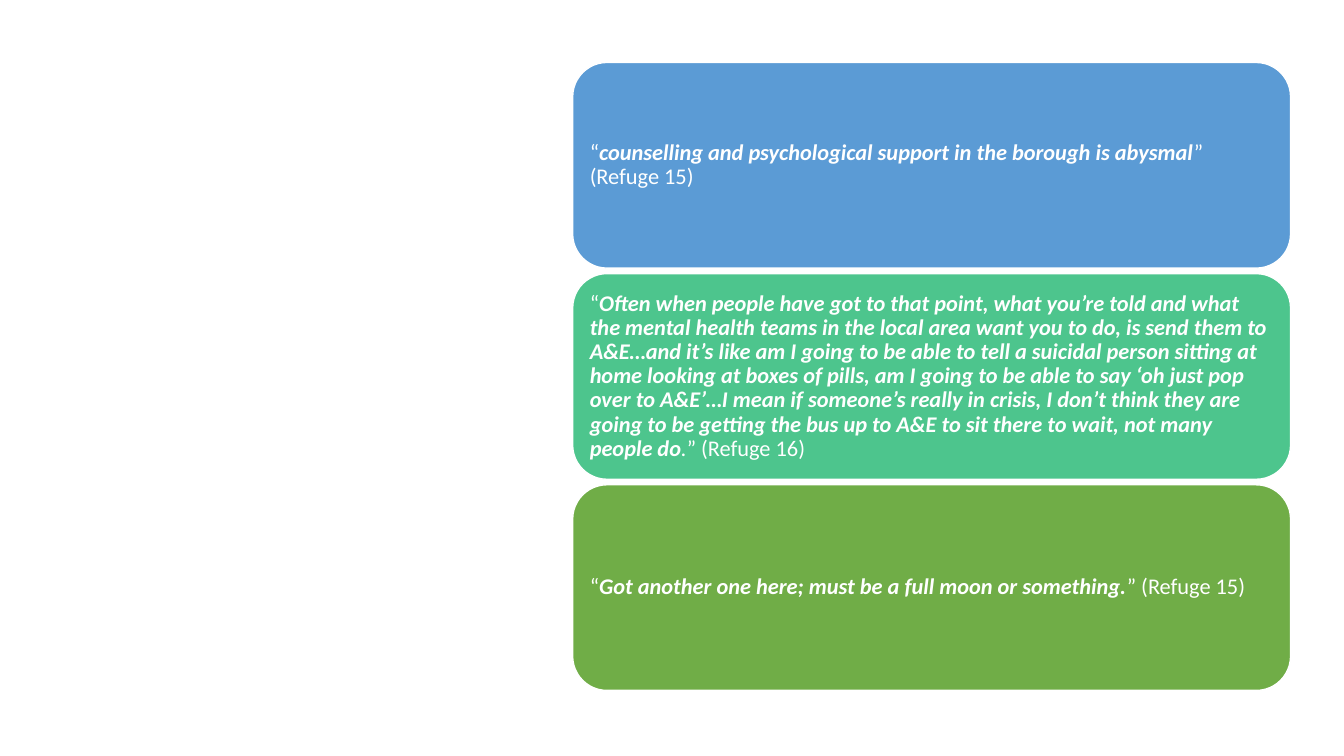
from dataclasses import dataclass

from pptx import Presentation
from pptx.dml.color import RGBColor
from pptx.enum.shapes import MSO_SHAPE
from pptx.enum.text import MSO_ANCHOR, PP_ALIGN
from pptx.util import Inches, Pt

ROUND = MSO_SHAPE.ROUNDED_RECTANGLE
MIDDLE = MSO_ANCHOR.MIDDLE
LEFT = PP_ALIGN.LEFT


@dataclass(frozen=True)
class Theme:
    blue: str = "5B9BD5"
    teal: str = "4DC58D"
    green: str = "70AD47"
    white: str = "FFFFFF"
    font: str = "Calibri"
    size: int = 16


THEME = Theme()
PLAIN, SLANT, STRONG = (False, False), (False, True), (True, True)

QUOTES = [
    (THEME.blue, [
        ("“", PLAIN),
        ("counselling and psychological support in the borough is abysmal", STRONG),
        ("” (Refuge 15)", PLAIN),
    ]),
    (THEME.teal, [
        ("“", PLAIN),
        ("Often when people have got to that point, what you’re told and what "
         "the mental health teams in the local area want you to do, is send "
         "them to A&E…and it’s like am I going to be able to tell a suicidal "
         "person sitting at home looking at boxes of pills, am I going to be "
         "able to say ‘oh just pop over to A&E’…I mean if someone’s really in "
         "crisis, I don’t think they are going to be getting the bus up to A&E "
         "to sit there to wait, not many people do", STRONG),
        (".", SLANT),
        ("” (Refuge 16)", PLAIN),
    ]),
    (THEME.green, [
        ("“", PLAIN),
        ("Got another one here; must be a full moon or something.", STRONG),
        ("” (Refuge 15)", PLAIN),
    ]),
]


def add_card(slide, top, fill, parts):
    card = slide.shapes.add_shape(
        ROUND, Inches(5.68), Inches(top), Inches(7.12), Inches(2.04))
    card.shadow.inherit = False
    card.fill.solid()
    card.fill.fore_color.rgb = RGBColor.from_string(fill)
    card.line.color.rgb = RGBColor.from_string(THEME.white)
    card.line.width = Pt(1)
    write_quote(card.text_frame, parts)


def write_quote(frame, parts):
    frame.word_wrap = True
    frame.vertical_anchor = MIDDLE
    frame.margin_left = frame.margin_right = Inches(0.07)
    frame.margin_top = frame.margin_bottom = Inches(0.07)
    para = frame.paragraphs[0]
    para.alignment = LEFT
    para.line_spacing = 0.9
    para.font.name = THEME.font
    para.font.size = Pt(THEME.size)
    para.font.color.rgb = RGBColor.from_string(THEME.white)
    for text, (bold, slant) in parts:
        run = para.add_run()
        run.text = text
        run.font.bold = bold
        run.font.italic = slant


def main():
    deck = Presentation()
    deck.slide_width = Inches(13.33)
    deck.slide_height = Inches(7.5)
    slide = deck.slides.add_slide(deck.slide_layouts[6])
    for row, (fill, parts) in enumerate(QUOTES):
        add_card(slide, 0.62 + row * 2.095, fill, parts)
    deck.save("out.pptx")


if __name__ == "__main__":
    main()
